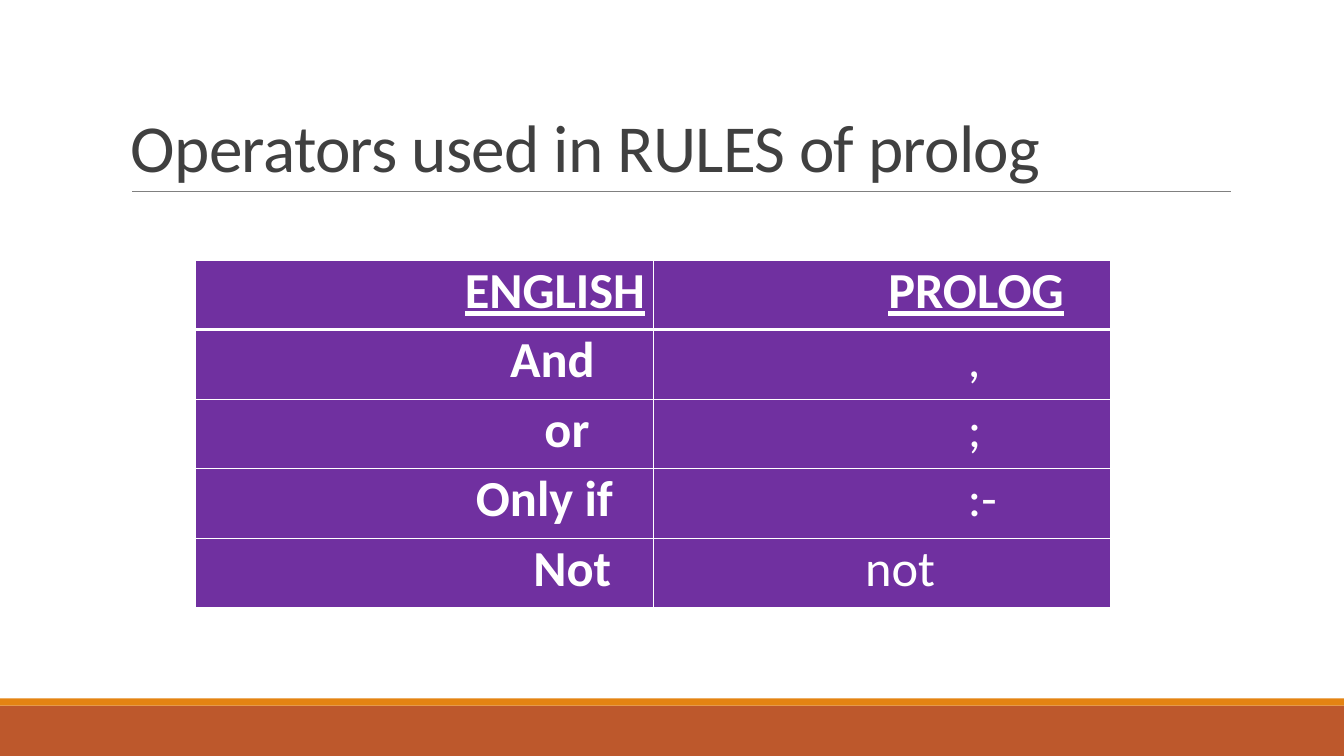
from dataclasses import dataclass

from lxml import etree
from pptx import Presentation
from pptx.dml.color import RGBColor
from pptx.enum.shapes import MSO_CONNECTOR, MSO_SHAPE
from pptx.enum.text import MSO_ANCHOR, PP_ALIGN
from pptx.oxml.ns import qn
from pptx.util import Inches, Pt

RECTANGLE = MSO_SHAPE.RECTANGLE
STRAIGHT = MSO_CONNECTOR.STRAIGHT
BOTTOM = MSO_ANCHOR.BOTTOM
JUSTIFY = PP_ALIGN.JUSTIFY


@dataclass(frozen=True)
class Theme:
    font: str = "Calibri"
    title_size: float = 48
    table_size: float = 36
    title: str = "404040"
    rule: str = "808080"
    footer: str = "BD582C"
    accent: str = "E48312"
    cell: str = "7030A0"
    white: str = "FFFFFF"


@dataclass(frozen=True)
class Band:
    top: float
    height: float
    color: str


@dataclass(frozen=True)
class Entry:
    text: str
    indent: float
    bold: bool = True
    underline: bool = False


THEME = Theme()
SLIDE_WIDTH, SLIDE_HEIGHT = 13.33, 7.5
COLUMN_WIDTH, ROW_HEIGHT = 4.54, 0.69

BANDS = (
    Band(7, 0.5, THEME.footer),
    Band(6.93, 0.07, THEME.accent),
)

OPERATORS = (
    (Entry("ENGLISH", 2.67, underline=True), Entry("PROLOG", 2.33, underline=True)),
    (Entry("And", 3.12), Entry(",", 3.12, bold=False)),
    (Entry("or", 3.46), Entry(";", 3.12, bold=False)),
    (Entry("Only if", 2.78), Entry(":-", 3.12, bold=False)),
    (Entry("Not", 3.35), Entry("not", 2.1, bold=False)),
)


def rgb(color: str) -> RGBColor:
    return RGBColor.from_string(color)


def style_font(font, size: float, color: str) -> None:
    font.name = THEME.font
    font.size = Pt(size)
    font.color.rgb = rgb(color)


def draw_band(slide, band: Band) -> None:
    strip = slide.shapes.add_shape(
        RECTANGLE, 0, Inches(band.top), Inches(SLIDE_WIDTH), Inches(band.height))
    strip.shadow.inherit = False
    strip.fill.solid()
    strip.fill.fore_color.rgb = rgb(band.color)
    strip.line.fill.background()


def draw_title(slide, wording: str) -> None:
    title = slide.shapes.add_textbox(
        Inches(1.2), Inches(0.31), Inches(11), Inches(1.59))
    frame = title.text_frame
    frame.word_wrap = True
    frame.vertical_anchor = BOTTOM
    frame.text = wording
    paragraph = frame.paragraphs[0]
    paragraph.line_spacing = 0.85
    font = paragraph.runs[0].font
    style_font(font, THEME.title_size, THEME.title)
    # Slightly tightened letter spacing
    paragraph.runs[0]._r.get_or_add_rPr().set("spc", "-50")


def draw_title_rule(slide) -> None:
    rule = slide.shapes.add_connector(
        STRAIGHT, Inches(1.31), Inches(1.9), Inches(12.21), Inches(1.9))
    rule.line.color.rgb = rgb(THEME.rule)
    rule.line.width = Pt(0.5)
    etree.SubElement(rule._element.spPr, qn("a:effectLst"))


def add_borders(cell, top: float, bottom: float) -> None:
    properties = cell._tc.get_or_add_tcPr()
    widths = {"a:lnL": 1, "a:lnR": 1, "a:lnT": top, "a:lnB": bottom}
    # Borders must precede the cell fill
    for position, (tag, width) in enumerate(widths.items()):
        border = etree.Element(qn(tag), w=str(Pt(width)))
        fill = etree.SubElement(border, qn("a:solidFill"))
        etree.SubElement(fill, qn("a:srgbClr"), val=THEME.white)
        properties.insert(position, border)


def fill_cell(cell, entry: Entry) -> None:
    cell.margin_left = Inches(entry.indent)
    cell.margin_right = cell.margin_top = cell.margin_bottom = 0
    cell.fill.solid()
    cell.fill.fore_color.rgb = rgb(THEME.cell)
    cell.text_frame.text = entry.text
    paragraph = cell.text_frame.paragraphs[0]
    paragraph.alignment = JUSTIFY
    font = paragraph.runs[0].font
    style_font(font, THEME.table_size, THEME.white)
    font.bold = entry.bold
    font.underline = entry.underline


def draw_operators(slide) -> None:
    row_count, column_count = len(OPERATORS), len(OPERATORS[0])
    operators = slide.shapes.add_table(
        row_count, column_count, Inches(1.94), Inches(2.58),
        Inches(column_count * COLUMN_WIDTH), Inches(row_count * ROW_HEIGHT)).table
    for column in operators.columns:
        column.width = Inches(COLUMN_WIDTH)
    for row_index, entries in enumerate(OPERATORS):
        operators.rows[row_index].height = Inches(ROW_HEIGHT)
        for column_index, entry in enumerate(entries):
            cell = operators.cell(row_index, column_index)
            fill_cell(cell, entry)
            # Heavy line between header and body
            add_borders(cell, top=3 if row_index == 1 else 1,
                        bottom=3 if row_index == 0 else 1)


def main() -> None:
    presentation = Presentation()
    presentation.slide_width = Inches(SLIDE_WIDTH)
    presentation.slide_height = Inches(SLIDE_HEIGHT)
    slide = presentation.slides.add_slide(presentation.slide_layouts[6])
    slide.background.fill.solid()
    slide.background.fill.fore_color.rgb = rgb(THEME.white)

    # Footer bands
    for band in BANDS:
        draw_band(slide, band)

    # Heading
    draw_title_rule(slide)
    draw_title(slide, "Operators used in RULES of prolog")

    # Operator table
    draw_operators(slide)

    presentation.save("out.pptx")


if __name__ == "__main__":
    main()
